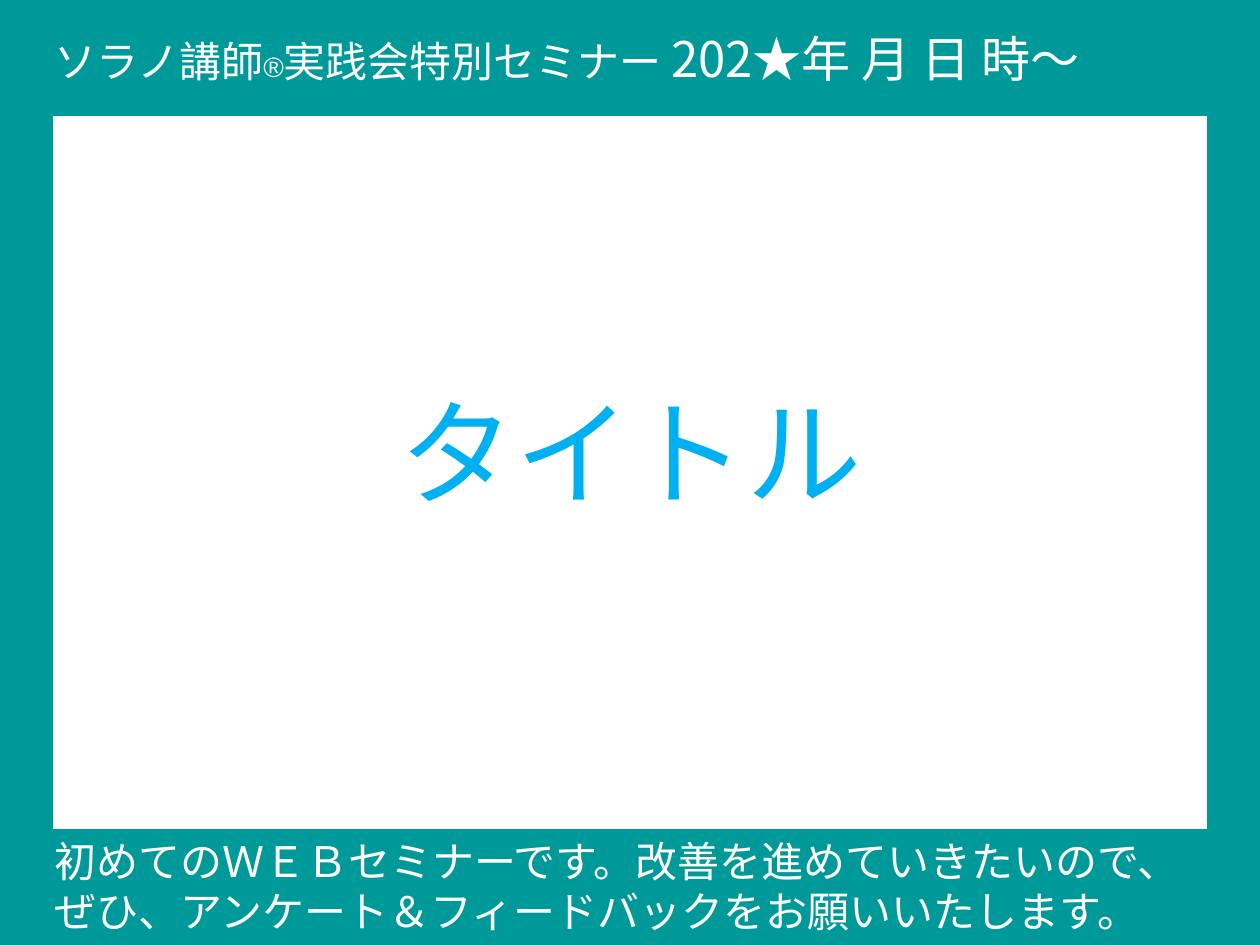
import pptx
import pptx.util
import pptx.dml.color
import pptx.enum.shapes
import pptx.enum.text

Inches = pptx.util.Inches
RGB = pptx.dml.color.RGBColor
ALIGN = pptx.enum.text.PP_ALIGN
ANCHOR = pptx.enum.text.MSO_ANCHOR

TEAL = RGB(0x00, 0x99, 0x99)
WHITE = RGB(0xFF, 0xFF, 0xFF)
BLUE = RGB(0x00, 0xB0, 0xF0)
LATIN = "Arial"
KANA = "Noto Sans CJK JP"

WIDE, HIGH = 10, 7.5
BAND = 0.92
SIDE = 0.42


def write(para, text, size=24, font=LATIN, color=WHITE):
    run = para.add_run()
    run.text = text
    run.font.size = pptx.util.Pt(size)
    run.font.name = font
    run.font.color.rgb = color


class Deck:
    def __init__(self, fill):
        self.fill = fill
        self.show = pptx.Presentation()
        self.show.slide_width = Inches(WIDE)
        self.show.slide_height = Inches(HIGH)
        self.slide = self.show.slides.add_slide(self.show.slide_layouts[5])

    def title(self, text, left, top, width, height):
        shape = self.slide.shapes.title
        shape.left, shape.top = Inches(left), Inches(top)
        shape.width, shape.height = Inches(width), Inches(height)
        frame = shape.text_frame
        frame.vertical_anchor = ANCHOR.MIDDLE
        para = frame.paragraphs[0]
        para.alignment = ALIGN.CENTER
        write(para, text, size=66, font=KANA, color=BLUE)

    def band(self, left, top, width, height, lines=(), anchor=ANCHOR.TOP):
        shape = self.slide.shapes.add_shape(
            pptx.enum.shapes.MSO_SHAPE.RECTANGLE,
            Inches(left), Inches(top), Inches(width), Inches(height))
        shape.shadow.inherit = False
        shape.fill.solid()
        shape.fill.fore_color.rgb = self.fill
        shape.line.fill.background()
        frame = shape.text_frame
        frame.word_wrap = True
        frame.margin_left = Inches(0.43)
        frame.vertical_anchor = anchor
        for i, runs in enumerate(lines):
            para = frame.add_paragraph() if i else frame.paragraphs[0]
            para.alignment = ALIGN.LEFT
            for text, form in runs:
                write(para, text, **form)


def main():
    deck = Deck(TEAL)
    deck.title("タイトル", 0.28, 1.07, 9.45, 5)
    head = [
        ("ソラノ講師", {}),
        ("®", {"size": 16}),
        ("実践会特別セミナー ", {}),
        ("202★年 ", {"size": 28, "font": KANA}),
        ("月 日 時～", {"size": 28}),
    ]
    foot = [
        [("初めてのＷＥＢセミナーです。改善を進めていきたいので、", {})],
        [("ぜひ、アンケート＆フィードバックをお願いいたします。", {})],
    ]
    deck.band(0, 0, WIDE, BAND, [head], ANCHOR.MIDDLE)
    deck.band(0, HIGH - BAND, WIDE, BAND, foot)
    for left, top in ((0, 0.17), (WIDE - SIDE, 0.62)):
        deck.band(left, top, SIDE, 6.42)
    deck.show.save("out.pptx")


if __name__ == "__main__":
    main()
